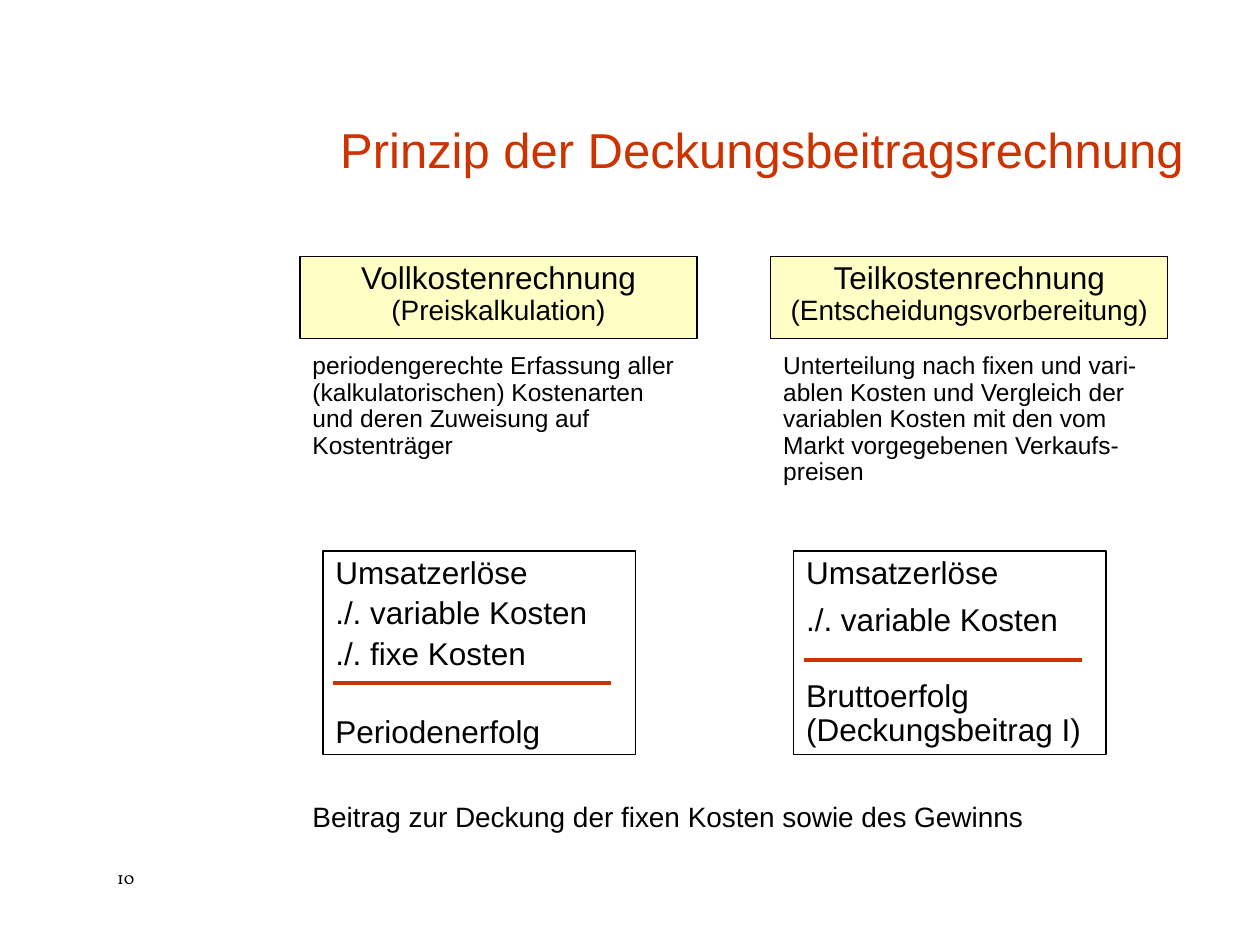
from lxml import etree
from pptx import Presentation
from pptx import util as u
from pptx.dml.color import RGBColor
from pptx.enum import shapes, text
from pptx.oxml import ns

BLACK = RGBColor(0x00, 0x00, 0x00)
RED = RGBColor(0xCC, 0x33, 0x00)
CREAM = RGBColor(0xFF, 0xFF, 0xC5)


def add_text(paragraph, wording, size, color=BLACK, font="Arial"):
    run = paragraph.add_run()
    run.text = wording
    run.font.size = u.Pt(size)
    run.font.name = font
    run.font.color.rgb = color


def add_box(left, top, width, height, fill=None, outlined=False):
    area = u.Cm(left), u.Cm(top), u.Cm(width), u.Cm(height)
    if outlined:
        shape = slide.shapes.add_shape(shapes.MSO_SHAPE.RECTANGLE, *area)
        shape.shadow.inherit = False
        shape.line.color.rgb = BLACK
        shape.line.width = u.Pt(0.75)
        if fill is None:
            shape.fill.background()
        else:
            shape.fill.solid()
            shape.fill.fore_color.rgb = fill
    else:
        shape = slide.shapes.add_textbox(*area)
    shape.text_frame.word_wrap = True
    shape.text_frame.vertical_anchor = text.MSO_ANCHOR.TOP
    shape.text_frame.paragraphs[0].alignment = text.PP_ALIGN.LEFT
    return shape.text_frame


presentation = Presentation()
presentation.slide_width = u.Cm(25.4)
presentation.slide_height = u.Cm(19.05)
slide = presentation.slides.add_slide(presentation.slide_layouts[5])

title = slide.shapes.title
title.left, title.top = u.Cm(5.31), u.Cm(1.05)
title.width, title.height = u.Cm(18.8), u.Cm(2.67)
title.text_frame.vertical_anchor = text.MSO_ANCHOR.BOTTOM
title.text_frame.paragraphs[0].alignment = text.PP_ALIGN.RIGHT
add_text(title.text_frame.paragraphs[0], "Prinzip der Deckungsbeitragsrechnung", 28, RED)

columns = [
    ("Vollkostenrechnung", "(Preiskalkulation)",
     "periodengerechte Erfassung aller (kalkulatorischen) Kostenarten "
     "und deren Zuweisung auf Kostenträger",
     [("Umsatzerlöse", 0), ("./. variable Kosten", 3.6),
      ("./. fixe Kosten", 3.6), ("Periodenerfolg", 25.2)], 13.77),
    ("Teilkostenrechnung", "(Entscheidungsvorbereitung)",
     "Unterteilung nach fixen und vari-ablen Kosten und Vergleich der variablen "
     "Kosten mit den vom Markt vorgegebenen Verkaufs-preisen",
     [("Umsatzerlöse", 0), ("./. variable Kosten", 7.2),
      ("Bruttoerfolg (Deckungsbeitrag I)", 24)], 13.31),
]

for index, (heading, purpose, description, calculation, rule_top) in enumerate(columns):
    left = 6.05 + index * 9.49

    paragraph = add_box(left, 5.17, 8, 1.65, CREAM, outlined=True).paragraphs[0]
    paragraph.alignment = text.PP_ALIGN.CENTER
    paragraph.line_spacing = 0.9
    add_text(paragraph, heading, 18)
    paragraph.add_line_break()
    add_text(paragraph, purpose, 16)

    paragraph = add_box(left, 7, 8, 3.84).paragraphs[0]
    paragraph.line_spacing = 0.9
    add_text(paragraph, description, 14)

    frame = add_box(left + 0.46, 11.11, 6.3, 4.1, outlined=True)
    for row, (entry, space) in enumerate(calculation):
        paragraph = frame.add_paragraph() if row else frame.paragraphs[0]
        paragraph.alignment = text.PP_ALIGN.LEFT
        paragraph.line_spacing = 0.9
        if space:
            paragraph.space_before = u.Pt(space)
        add_text(paragraph, entry, 18)

    rule = slide.shapes.add_connector(
        shapes.MSO_CONNECTOR.STRAIGHT,
        u.Cm(left + 0.66), u.Cm(rule_top), u.Cm(left + 6.27), u.Cm(rule_top))
    rule.line.color.rgb = RED
    rule.line.width = u.Pt(2)
    etree.SubElement(rule._element.spPr, ns.qn("a:effectLst"))

conclusion = add_box(6.05, 16, 18.31, 0.91).paragraphs[0]
add_text(conclusion, "Beitrag zur Deckung der fixen Kosten sowie des Gewinns", 16)

page_number = add_box(2.11, 17.35, 1.7, 0.69).paragraphs[0]
add_text(page_number, "10", 10, font="Vollkorn")

presentation.save("out.pptx")
